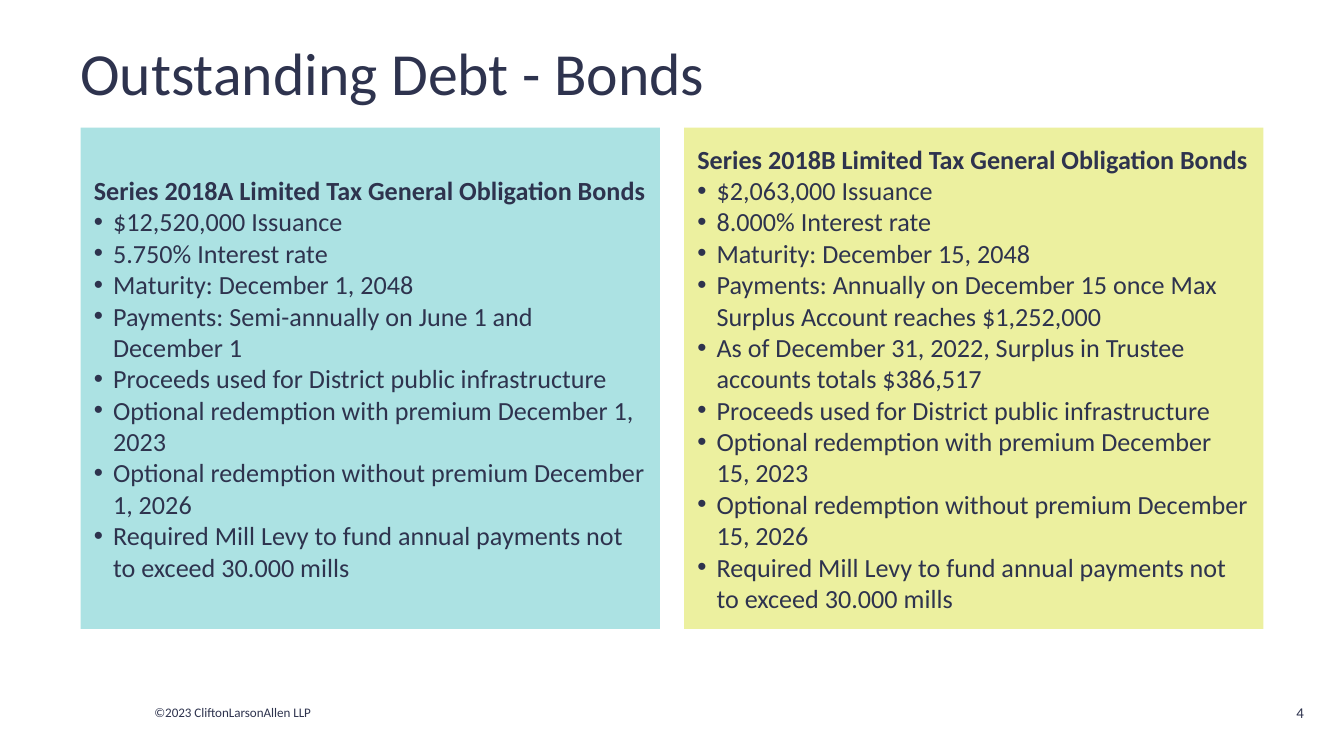
from pptx import Presentation
from pptx.dml.color import RGBColor
from pptx.enum.shapes import MSO_SHAPE as Shape
from pptx.enum.text import MSO_ANCHOR as Anchor, PP_ALIGN as Align
from pptx.oxml.ns import qn
from pptx.util import Pt
from lxml.etree import SubElement

NAVY = RGBColor(0x2E, 0x33, 0x4E)
TEAL = RGBColor(0x7D, 0xD2, 0xD3)
LIME = RGBColor(0xE2, 0xE8, 0x68)

PANEL_LEFT, PANEL_TOP = 43.2, 68.4
PANEL_WIDTH, PANEL_HEIGHT = 310.3, 268.6
PANEL_GAP = 13
PANEL_OPACITY = 63
BULLET_INDENT = 10.3

SERIES = [
    (TEAL, "Series 2018A Limited Tax General Obligation Bonds", [
        "$12,520,000 Issuance",
        "5.750% Interest rate",
        "Maturity: December 1, 2048",
        "Payments: Semi-annually on June 1 and December 1",
        "Proceeds used for District public infrastructure",
        "Optional redemption with premium December 1, 2023",
        "Optional redemption without premium December 1, 2026",
        "Required Mill Levy to fund annual payments not to exceed 30.000 mills",
    ]),
    (LIME, "Series 2018B Limited Tax General Obligation Bonds", [
        "$2,063,000 Issuance",
        "8.000% Interest rate",
        "Maturity: December 15, 2048",
        "Payments: Annually on December 15 once Max Surplus Account reaches $1,252,000",
        "As of December 31, 2022, Surplus in Trustee accounts totals $386,517",
        "Proceeds used for District public infrastructure",
        "Optional redemption with premium December 15, 2023",
        "Optional redemption without premium December 15, 2026",
        "Required Mill Levy to fund annual payments not to exceed 30.000 mills",
    ]),
]


class DebtPage:
    """Hold the style and the current slide, and draw its elements."""

    def __init__(self, page, font="Calibri", color=NAVY):
        self.page = page
        self.font = font
        self.color = color

    def style(self, paragraph, size, bold=False, align=Align.LEFT):
        paragraph.alignment = align
        for span in paragraph.runs:
            span.font.name = self.font
            span.font.size = Pt(size)
            span.font.bold = bold
            span.font.color.rgb = self.color

    def label(self, text, left, top, width, height, size, align=Align.LEFT):
        box = self.page.shapes.add_textbox(Pt(left), Pt(top), Pt(width), Pt(height))
        frame = box.text_frame
        frame.word_wrap = True
        frame.vertical_anchor = Anchor.MIDDLE
        frame.text = text
        self.style(frame.paragraphs[0], size, align=align)

    def bullet(self, paragraph):
        properties = paragraph._p.get_or_add_pPr()
        properties.set("marL", str(Pt(BULLET_INDENT)))
        properties.set("indent", str(-Pt(BULLET_INDENT)))
        SubElement(properties, qn("a:buFont"), typeface="Arial")
        SubElement(properties, qn("a:buChar"), char="•")

    def panel(self, left, fill, heading, terms, size=14):
        panel = self.page.shapes.add_shape(
            Shape.RECTANGLE, Pt(left), Pt(PANEL_TOP), Pt(PANEL_WIDTH), Pt(PANEL_HEIGHT))
        panel.shadow.inherit = False
        panel.line.fill.background()
        panel.fill.solid()
        panel.fill.fore_color.rgb = fill
        tint = panel.element.spPr.find(qn("a:solidFill")).find(qn("a:srgbClr"))
        SubElement(tint, qn("a:alpha"), val=str(PANEL_OPACITY * 1000))
        frame = panel.text_frame
        frame.word_wrap = True
        frame.vertical_anchor = Anchor.MIDDLE
        frame.text = "\n".join([heading, *terms])
        title, *items = frame.paragraphs
        self.style(title, size, bold=True)
        for item in items:
            self.bullet(item)
            self.style(item, size)


def main():
    deck = Presentation()
    deck.slide_width, deck.slide_height = Pt(720), Pt(405)
    debt = DebtPage(deck.slides.add_slide(deck.slide_layouts[6]))
    debt.label("©2023 CliftonLarsonAllen LLP", 75.6, 373.7, 108.7, 15.8, 7)
    debt.label("Outstanding Debt - Bonds", 36, 11.5, 648, 54, 32)
    debt.page.shapes[-1].text_frame.margin_left = Pt(7.2)
    debt.label("4", 674.6, 368, 31, 27.4, 8, Align.RIGHT)
    for column, (fill, heading, terms) in enumerate(SERIES):
        debt.panel(PANEL_LEFT + column * (PANEL_WIDTH + PANEL_GAP), fill, heading, terms)
    deck.save("out.pptx")


if __name__ == "__main__":
    main()
